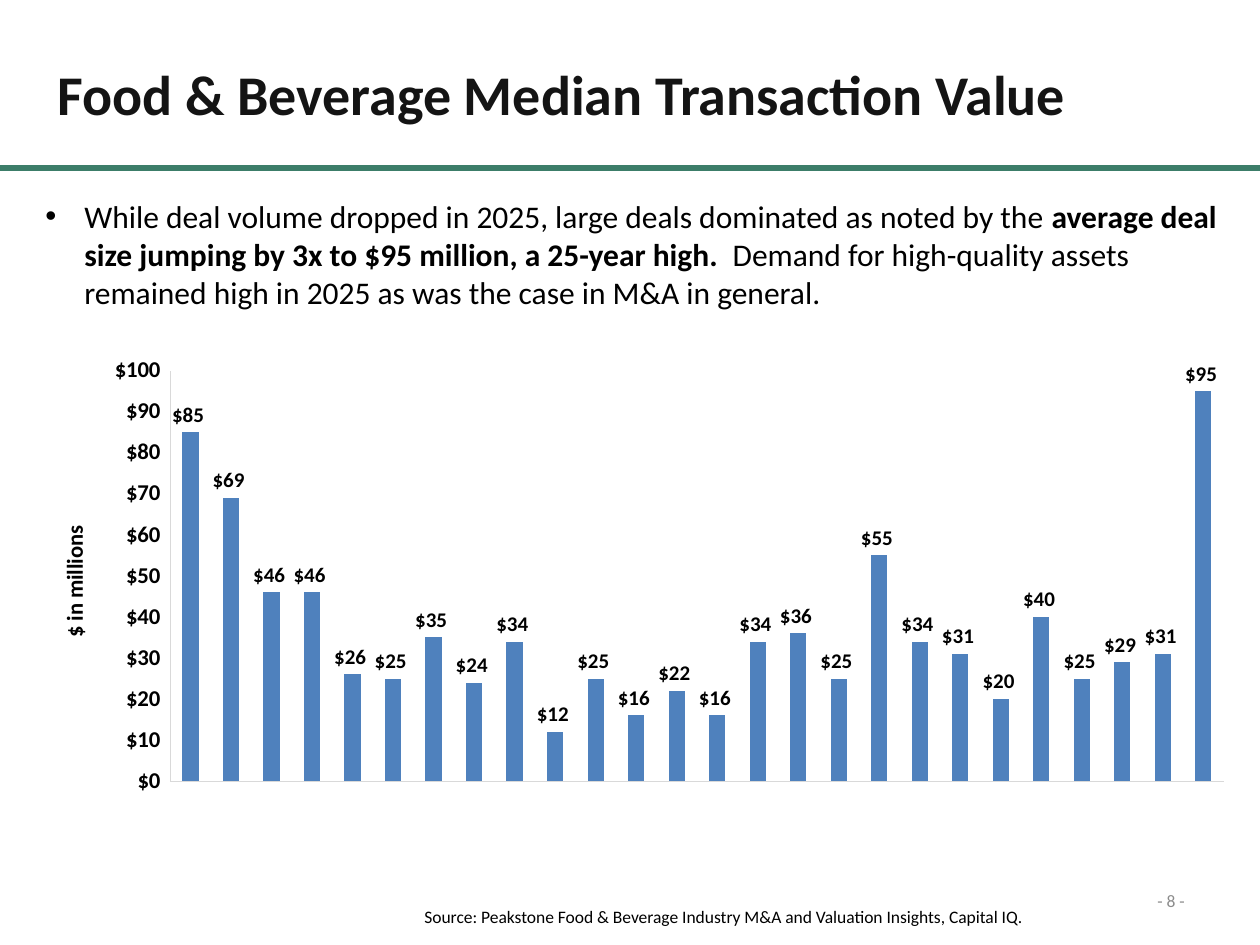
import pptx
import pptx.chart.data
import pptx.dml.color
import pptx.enum.chart
import pptx.enum.text
import pptx.oxml
import pptx.oxml.ns
import pptx.util

# Content
TITLE = "Food & Beverage Median Transaction Value"
BULLET = [
    ("While deal volume dropped in 2025, large deals dominated as noted by the ", False),
    ("average deal size jumping by 3x to $95 million, a 25-year high.", True),
    ("  Demand for high-quality assets remained high in 2025 as was the case in M&A in general.", False),
]
SOURCE = "Source: Peakstone Food & Beverage Industry M&A and Valuation Insights, Capital IQ."
PAGE_NUMBER = "- 8 -"
AXIS_TITLE = "$ in millions"
FIRST_YEAR = 2000
DEAL_VALUES = [85, 69, 46, 46, 26, 25, 35, 24, 34, 12, 25, 16, 22,
               16, 34, 36, 25, 55, 34, 31, 20, 40, 25, 29, 31, 95]
DOLLARS = '"$"#,##0_);\\("$"#,##0\\)'

# Theme and layout, in px
THEME = {
    "font": "Calibri",
    "colors": {"title": "141414", "text": "000000", "muted": "8C8C8C",
               "rule": "3C7D69", "bar": "4F81BD", "axis": "D9D9D9"},
    "sizes": {"title": 32, "body": 18, "axis": 13, "label": 12, "small": 10},
}
SCALE = 914400 / 126
SLIDE_SIZE = (1260, 945)
RULE_Y = 168
INDENT = 39
BOXES = {
    "title": (45, 53, 1043, 81),
    "body": (33, 191, 1222, 142),
    "chart": (43, 357, 1200, 480),
    "source": (412, 900, 639, 34),
    "page": (1092, 876, 105, 50),
}


def px(length):
    return pptx.util.Emu(round(length * SCALE))


def color(name):
    return pptx.dml.color.RGBColor.from_string(THEME["colors"][name])


def style(font, size, color_name="text", bold=False):
    values = {"name": THEME["font"], "size": pptx.util.Pt(THEME["sizes"][size]), "bold": bold}
    for attribute, value in values.items():
        setattr(font, attribute, value)
    font.color.rgb = color(color_name)


def add_text(slide, box, runs, size, color_name="text", wrap=True, **frame_format):
    """Add a one-paragraph text box from (text, bold) runs."""
    shape = slide.shapes.add_textbox(*map(px, BOXES[box]))
    frame = shape.text_frame
    frame.word_wrap = wrap
    for attribute, value in frame_format.items():
        setattr(frame, attribute, value)
    paragraph = frame.paragraphs[0]
    for text, bold in runs:
        run = paragraph.add_run()
        run.text = text
        style(run.font, size, color_name, bold)
    return paragraph


def add_bullet(paragraph):
    properties = paragraph._p.get_or_add_pPr()
    properties.set("marL", str(px(INDENT)))
    properties.set("indent", str(-px(INDENT)))
    namespace = pptx.oxml.ns.nsdecls("a")
    for xml in (f'<a:buFont {namespace} typeface="Arial"/>', f'<a:buChar {namespace} char="•"/>'):
        properties.append(pptx.oxml.parse_xml(xml))


def place(element, target=None, **fractions):
    """Give a chart part a manual layout in fractions of the chart."""
    for old in element.findall(pptx.oxml.ns.qn("c:layout")):
        element.remove(old)
    parts = [f'<c:layoutTarget val="{target}"/>'] if target else []
    parts += [f'<c:{axis}Mode val="edge"/>' for axis in ("x", "y")]
    parts += [f'<c:{key} val="{value}"/>' for key, value in fractions.items()]
    layout = pptx.oxml.parse_xml(
        f'<c:layout {pptx.oxml.ns.nsdecls("c")}><c:manualLayout>{"".join(parts)}'
        "</c:manualLayout></c:layout>")
    text = element.find(pptx.oxml.ns.qn("c:tx"))
    element.insert(0 if text is None else 1, layout)


def add_rule(slide):
    rule = slide.shapes.add_connector(
        pptx.enum.shapes.MSO_CONNECTOR.STRAIGHT, 0, px(RULE_Y), px(SLIDE_SIZE[0]), px(RULE_Y))
    rule.line.color.rgb = color("rule")
    rule.line.width = pptx.util.Pt(3)
    rule._element.spPr.append(
        pptx.oxml.parse_xml(f'<a:effectLst {pptx.oxml.ns.nsdecls("a")}/>'))


def add_deal_chart(slide):
    data = pptx.chart.data.CategoryChartData(number_format=DOLLARS)
    data.categories = [str(FIRST_YEAR + i) for i in range(len(DEAL_VALUES))]
    data.add_series("Series 1", DEAL_VALUES)
    chart = slide.shapes.add_chart(
        pptx.enum.chart.XL_CHART_TYPE.COLUMN_CLUSTERED, *map(px, BOXES["chart"]), data).chart
    chart.has_legend = chart.has_title = False
    style(chart.font, "axis", bold=True)
    place(chart._chartSpace.chart.plotArea, "inner", x=0.106, y=0.021, w=0.878, h=0.862)

    # Columns and their labels
    plot = chart.plots[0]
    plot.gap_width = 150
    plot.vary_by_categories = False
    fill = plot.series[0].format.fill
    fill.solid()
    fill.fore_color.rgb = color("bar")
    plot.has_data_labels = True
    labels = plot.data_labels
    label_format = {"show_value": True, "number_format": DOLLARS, "number_format_is_linked": False,
                    "position": pptx.enum.chart.XL_LABEL_POSITION.OUTSIDE_END}
    for attribute, value in label_format.items():
        setattr(labels, attribute, value)
    style(labels.font, "label", bold=True)

    # Axes
    for axis, size in ((chart.category_axis, "label"), (chart.value_axis, "axis")):
        axis.has_major_gridlines = False
        axis.major_tick_mark = axis.minor_tick_mark = pptx.enum.chart.XL_TICK_MARK.NONE
        axis.format.line.color.rgb = color("axis")
        axis.format.line.width = pptx.util.Pt(0.75)
        style(axis.tick_labels.font, size, bold=True)
    chart.category_axis.tick_label_position = pptx.enum.chart.XL_TICK_LABEL_POSITION.NONE
    value_axis = chart.value_axis
    value_format = {"minimum_scale": 0, "maximum_scale": 100, "major_unit": 10}
    for attribute, value in value_format.items():
        setattr(value_axis, attribute, value)
    value_axis.tick_labels.number_format = DOLLARS
    value_axis.tick_labels.number_format_is_linked = False
    title = value_axis.axis_title
    title.text_frame.text = AXIS_TITLE
    title.text_frame._txBody.bodyPr.set("rot", "-5400000")
    title.text_frame._txBody.bodyPr.set("vert", "horz")
    style(title.text_frame.paragraphs[0].runs[0].font, "axis", bold=True)
    place(title._element, x=0.01, y=0.34)


def main():
    presentation = pptx.Presentation()
    presentation.slide_width, presentation.slide_height = map(px, SLIDE_SIZE)
    slide = presentation.slides.add_slide(presentation.slide_layouts[6])

    # Heading
    add_rule(slide)
    add_text(slide, "title", [(TITLE, True)], "title", "title", wrap=False)

    # Footer
    page = add_text(slide, "page", [(PAGE_NUMBER, False)], "small", "muted",
                    vertical_anchor=pptx.enum.text.MSO_ANCHOR.MIDDLE)
    page.alignment = pptx.enum.text.PP_ALIGN.RIGHT
    add_text(slide, "source", [(SOURCE, False)], "small", wrap=False)

    # Chart and message
    add_deal_chart(slide)
    add_bullet(add_text(slide, "body", BULLET, "body"))
    presentation.save("out.pptx")


if __name__ == "__main__":
    main()
